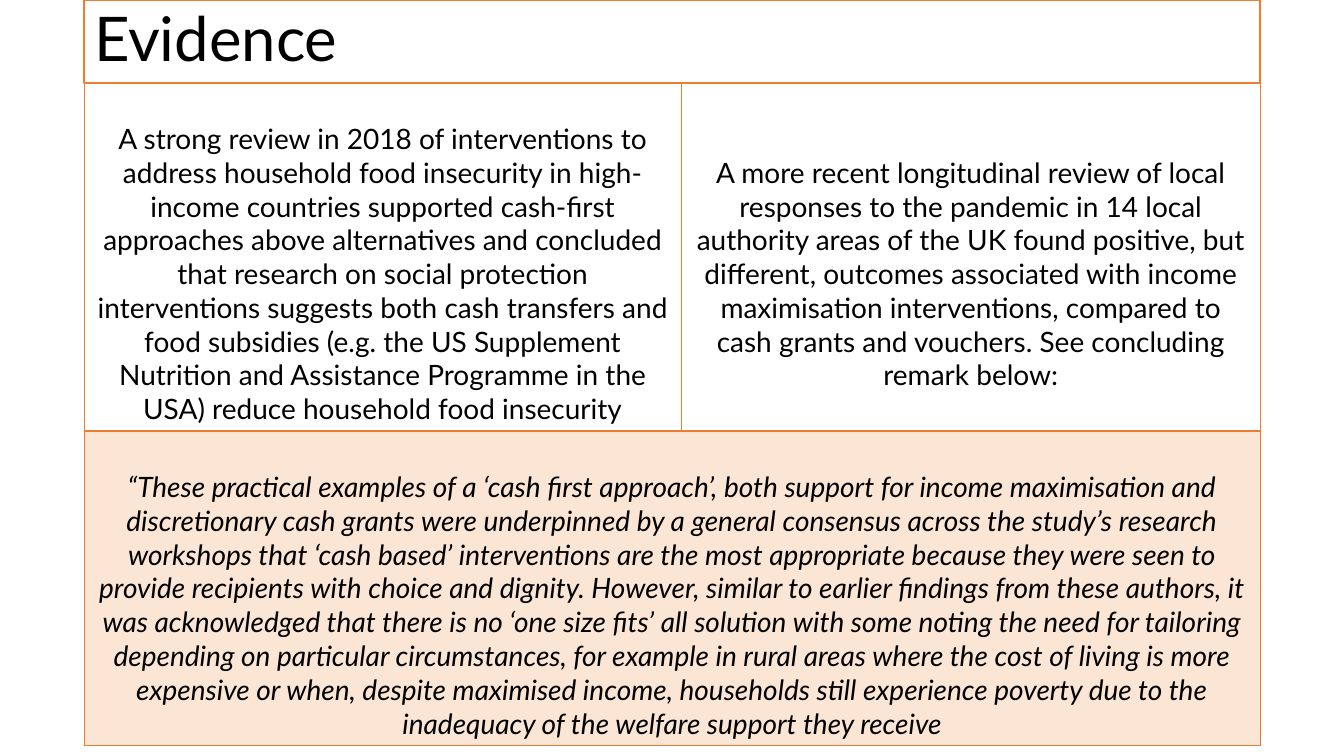
from lxml.etree import SubElement
from pptx import Presentation
from pptx.dml.color import RGBColor
from pptx.enum.shapes import MSO_SHAPE
from pptx.enum.text import MSO_ANCHOR, PP_ALIGN
from pptx.oxml import parse_xml
from pptx.oxml.ns import nsdecls, qn
from pptx.util import Cm, Pt

COLORS = {"text": "000000", "paper": "FFFFFF", "accent": "ED7D31"}
FONT = "Lato"
LEFT, TITLE_H = 2.12, 2.09
COLS, ROWS = (15.05, 14.59), (8.77, 7.91)

REVIEW = (
    "A strong review in 2018 of interventions to address household food insecurity in "
    "high-income countries supported cash-first approaches above alternatives and concluded "
    "that research on social protection interventions suggests both cash transfers and food "
    "subsidies (e.g. the US Supplement Nutrition and Assistance Programme in the USA) reduce "
    "household food insecurity"
)
RECENT = (
    "A more recent longitudinal review of local responses to the pandemic in 14 local "
    "authority areas of the UK found positive, but different, outcomes associated with income "
    "maximisation interventions, compared to cash grants and vouchers. See concluding remark "
    "below:"
)
QUOTE = (
    "“These practical examples of a ‘cash first approach’, both support for income "
    "maximisation and discretionary cash grants were underpinned by a general consensus across "
    "the study’s research workshops that ‘cash based’ interventions are the most appropriate "
    "because they were seen to provide recipients with choice and dignity. However, similar to "
    "earlier findings from these authors, it was acknowledged that there is no ‘one size fits’ "
    "all solution with some noting the need for tailoring depending on particular "
    "circumstances, for example in rural areas where the cost of living is more expensive or "
    "when, despite maximised income, households still experience poverty due to the inadequacy "
    "of the welfare support they receive"
)


def rgb(name):
    return RGBColor.from_string(COLORS[name])


def write(tf, text, size=20, align=PP_ALIGN.CENTER, italic=False, spacing=None):
    tf.word_wrap = True
    p = tf.paragraphs[0]
    p.alignment = align
    p.line_spacing = spacing
    r = p.add_run()
    r.text = text
    r.font.name, r.font.size = FONT, Pt(size)
    r.font.italic = italic
    r.font.color.rgb = rgb("text")


class Builder:
    def __init__(self, prs):
        self.s = prs.slides.add_slide(prs.slide_layouts[6])

    def title(self, text, x, y, w, h):
        sp = self.s.shapes.add_shape(MSO_SHAPE.RECTANGLE, Cm(x), Cm(y), Cm(w), Cm(h))
        sp.shadow.inherit = False
        sp.fill.solid()
        sp.fill.fore_color.rgb = rgb("paper")
        sp.line.color.rgb = rgb("accent")
        sp.line.width = Pt(1)
        sp.text_frame.vertical_anchor = MSO_ANCHOR.MIDDLE
        write(sp.text_frame, text, size=44, align=PP_ALIGN.LEFT, spacing=0.9)

    def table(self, x, y, cols, rows):
        frame = self.s.shapes.add_table(
            len(rows), len(cols), Cm(x), Cm(y), Cm(sum(cols)), Cm(sum(rows)))
        tbl = frame.table
        tbl.first_row = tbl.horz_banding = False
        for col, w in zip(tbl.columns, cols):
            col.width = Cm(w)
        for row, h in zip(tbl.rows, rows):
            row.height = Cm(h)
        for cell in tbl.iter_cells():
            cell.fill.background()
            self.borders(cell)
        return tbl

    def borders(self, cell):
        tcPr = cell._tc.get_or_add_tcPr()
        for i, side in enumerate("LRTB"):
            tcPr.insert(i, parse_xml(
                f'<a:ln{side} {nsdecls("a")} w="{Pt(1)}"><a:solidFill>'
                f'<a:srgbClr val="{COLORS["accent"]}"/></a:solidFill></a:ln{side}>'))

    def tint(self, cell, percent):
        cell.fill.solid()
        cell.fill.fore_color.rgb = rgb("accent")
        clr = cell._tc.tcPr.find(qn("a:solidFill")).find(qn("a:srgbClr"))
        SubElement(clr, qn("a:alpha")).set("val", str(percent * 1000))

    def cell(self, cell, text, top, **fmt):
        cell.margin_top = Cm(top)
        write(cell.text_frame, text, **fmt)


def main():
    prs = Presentation()
    prs.slide_width, prs.slide_height = Cm(33.87), Cm(19.05)
    b = Builder(prs)

    # Heading
    b.title("Evidence", LEFT, 0, sum(COLS), TITLE_H)

    # Two reviews above a quotation across both columns
    tbl = b.table(LEFT, TITLE_H, COLS, ROWS)
    b.cell(tbl.cell(0, 0), REVIEW, top=0.98)
    b.cell(tbl.cell(0, 1), RECENT, top=1.83)
    quote = tbl.cell(1, 0)
    quote.merge(tbl.cell(1, 1))
    b.tint(quote, 20)
    b.cell(quote, QUOTE, top=0.98, italic=True)

    prs.save("out.pptx")


if __name__ == "__main__":
    main()
